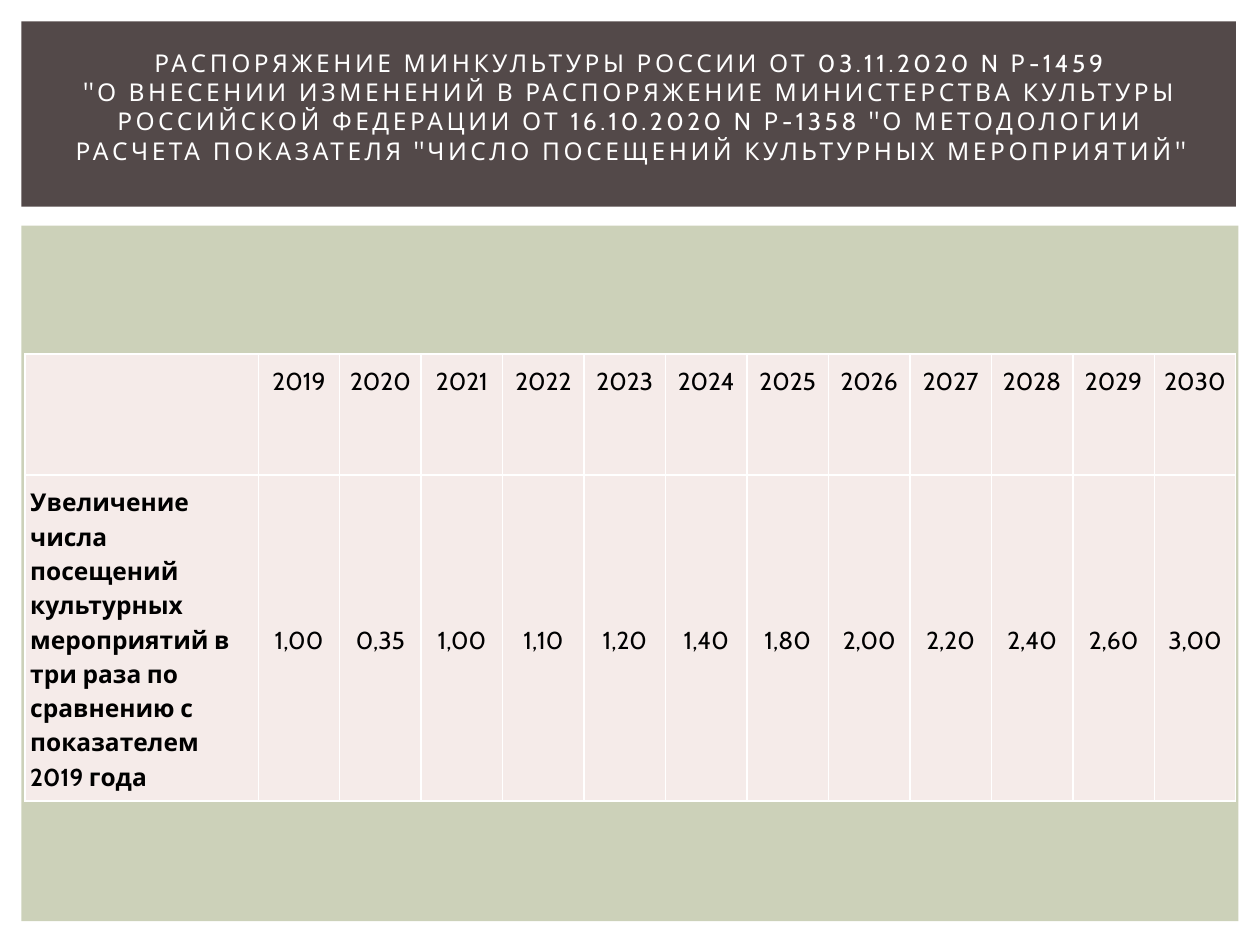
from dataclasses import dataclass

from lxml.etree import SubElement
from pptx import Presentation
from pptx.dml.color import RGBColor
from pptx.enum.shapes import MSO_SHAPE as Shape
from pptx.enum.text import MSO_ANCHOR as Anchor, MSO_AUTO_SIZE as AutoSize, PP_ALIGN as Align
from pptx.oxml.ns import qn
from pptx.util import Inches, Pt


@dataclass(frozen=True)
class Theme:
    font: str = "Cabin"
    size: int = 14
    letter_spacing: int = 200
    white: str = "FFFFFF"
    black: str = "000000"
    banner: str = "534949"
    panel: str = "CCD1B9"
    cell: str = "F5EBE9"


@dataclass(frozen=True)
class Box:
    left: float
    top: float
    width: float
    height: float

    def lengths(self) -> list:
        return [Inches(value) for value in (self.left, self.top, self.width, self.height)]


THEME = Theme()
PANEL = Box(0.17, 1.79, 9.66, 5.52)
BANNER = Box(0.17, 0.17, 9.64, 1.47)
TITLE = Box(0.42, 0.39, 9.17, 1.15)
TABLE = Box(0.2, 2.81, 9.61, 3.54)
LABEL_WIDTH = 1.85
ROW_HEIGHTS = (0.96, 2.58)

TITLE_TEXT = (
    "РАСПОРЯЖЕНИЕ МИНКУЛЬТУРЫ РОССИИ ОТ 03.11.2020 N Р-1459\v"
    "\"О ВНЕСЕНИИ ИЗМЕНЕНИЙ В РАСПОРЯЖЕНИЕ МИНИСТЕРСТВА КУЛЬТУРЫ "
    "РОССИЙСКОЙ ФЕДЕРАЦИИ ОТ 16.10.2020 N Р-1358 \"О МЕТОДОЛОГИИ "
    "РАСЧЕТА ПОКАЗАТЕЛЯ \"ЧИСЛО ПОСЕЩЕНИЙ КУЛЬТУРНЫХ МЕРОПРИЯТИЙ\""
)
LABEL = ("Увеличение числа посещений культурных мероприятий в три раза "
         "по сравнению с показателем 2019 года")
YEARS = [str(year) for year in range(2019, 2031)]
VALUES = "1,00 0,35 1,00 1,10 1,20 1,40 1,80 2,00 2,20 2,40 2,60 3,00".split()


def style_font(font, color: str, bold: bool = False) -> None:
    font.name = THEME.font
    font.size = Pt(THEME.size)
    font.bold = bold
    font.color.rgb = RGBColor.from_string(color)


def add_rectangle(slide, box: Box, color: str) -> None:
    shape = slide.shapes.add_shape(Shape.RECTANGLE, *box.lengths())
    shape.shadow.inherit = False
    shape.fill.solid()
    shape.fill.fore_color.rgb = RGBColor.from_string(color)
    shape.line.fill.background()


def set_title(slide, box: Box, text: str) -> None:
    title = slide.shapes.title
    title.left, title.top, title.width, title.height = box.lengths()
    frame = title.text_frame
    frame.text = text
    frame.word_wrap = True
    frame.auto_size = AutoSize.NONE
    frame.vertical_anchor = Anchor.MIDDLE
    # The deeper bottom inset lifts the text within the banner
    frame.margin_top, frame.margin_bottom = 0, Inches(0.24)
    paragraph = frame.paragraphs[0]
    paragraph.alignment = Align.CENTER
    paragraph.line_spacing = 1.0
    paragraph.space_before = Pt(0)
    for run in paragraph.runs:
        style_font(run.font, THEME.white)
        run.font._element.set("spc", str(THEME.letter_spacing))


def set_borders(cell) -> None:
    properties = cell._tc.get_or_add_tcPr()
    for index, side in enumerate(("lnL", "lnR", "lnT", "lnB")):
        line = SubElement(properties, qn(f"a:{side}"), w=str(Pt(1)))
        fill = SubElement(line, qn("a:solidFill"))
        SubElement(fill, qn("a:srgbClr"), val=THEME.white)
        properties.insert(index, line)


def fill_cell(cell, text: str, is_label: bool, anchor: Anchor) -> None:
    cell.text = text
    cell.fill.solid()
    cell.fill.fore_color.rgb = RGBColor.from_string(THEME.cell)
    set_borders(cell)
    cell.vertical_anchor = anchor
    cell.margin_left = cell.margin_right = Inches(0.04)
    cell.margin_top = cell.margin_bottom = Inches(0.07)
    paragraph = cell.text_frame.paragraphs[0]
    paragraph.alignment = Align.LEFT if is_label else Align.CENTER
    paragraph.line_spacing = 1.15
    for run in paragraph.runs:
        style_font(run.font, THEME.black, bold=is_label)


def add_indicator_table(slide) -> None:
    rows = [["", *YEARS], [LABEL, *VALUES]]
    table = slide.shapes.add_table(len(rows), len(rows[0]), *TABLE.lengths()).table
    year_width = (TABLE.width - LABEL_WIDTH) / len(YEARS)
    for index, column in enumerate(table.columns):
        column.width = Inches(year_width if index else LABEL_WIDTH)
    for row, height in zip(table.rows, ROW_HEIGHTS):
        row.height = Inches(height)
    for row_index, (texts, anchor) in enumerate(zip(rows, (Anchor.TOP, Anchor.MIDDLE))):
        for column_index, text in enumerate(texts):
            fill_cell(table.cell(row_index, column_index), text, column_index == 0, anchor)


def main() -> None:
    presentation = Presentation()
    presentation.slide_width, presentation.slide_height = Inches(10), Inches(7.5)
    slide = presentation.slides.add_slide(presentation.slide_layouts[5])

    # Background panels
    add_rectangle(slide, PANEL, THEME.panel)
    add_rectangle(slide, BANNER, THEME.banner)

    # Yearly indicator values
    add_indicator_table(slide)

    # Title, brought in front of the banner
    set_title(slide, TITLE, TITLE_TEXT)
    slide.shapes._spTree.append(slide.shapes.title._element)

    presentation.save("out.pptx")


if __name__ == "__main__":
    main()
